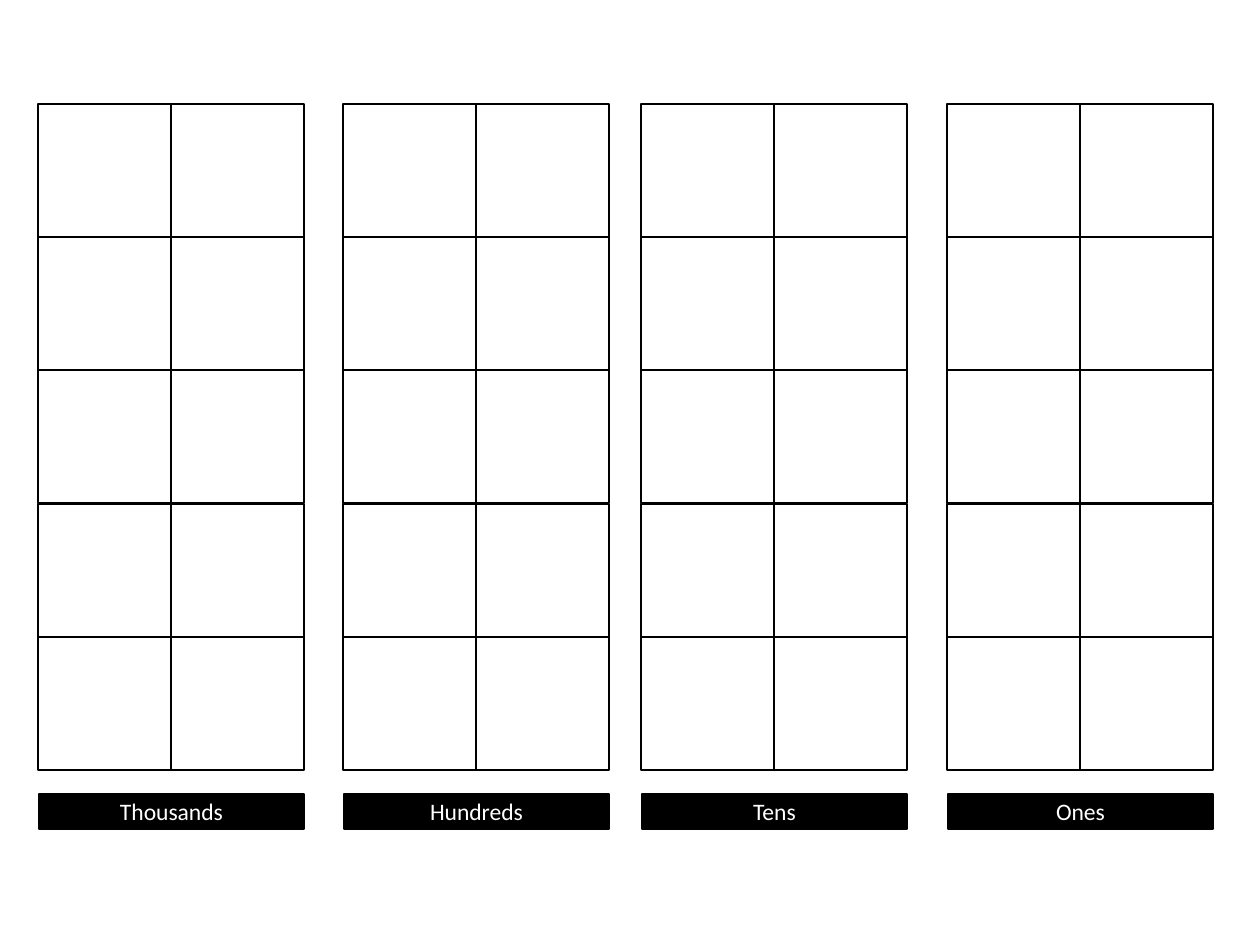
from pptx import Presentation, util as u
from pptx.dml.color import RGBColor
from pptx.enum import shapes, text

EMU_PER_PX = 914400 / 126
COLORS = {"ink": "000000", "paper": "FFFFFF"}
COLUMNS = {"Thousands": 38, "Hundreds": 343, "Tens": 641, "Ones": 947}
ROWS, CELLS_ACROSS = 5, 2
FRAME_TOP, FRAME_HEIGHT = 104, 667
CELL = 133


def px(length):
    """Turn pixels into EMU."""
    return u.Emu(round(length * EMU_PER_PX))


class PlaceValueMat:
    """Style and drawing methods for a place value mat of ten frames."""

    font = "Calibri"
    label_size = u.Pt(13.5)

    def __init__(self, slide):
        self.slide = slide

    def rectangle(self, group, left, top, width, height, fill, line_width):
        shape = group.shapes.add_shape(
            shapes.MSO_SHAPE.RECTANGLE, px(left), px(top), px(width), px(height))
        shape.shadow.inherit = False
        shape.fill.solid()
        shape.fill.fore_color.rgb = RGBColor.from_string(COLORS[fill])
        shape.line.color.rgb = RGBColor.from_string(COLORS["ink"])
        shape.line.width = u.Pt(line_width)
        return shape

    def ten_frame(self, group, left):
        for across in range(CELLS_ACROSS):
            for row in range(ROWS):
                top = FRAME_TOP + row * FRAME_HEIGHT // ROWS
                self.rectangle(group, left + across * CELL, top, CELL, CELL, "paper", 1.5)

    def label(self, group, left, caption):
        shape = self.rectangle(group, left + 1, 794, 265, 35, "ink", 1)
        frame = shape.text_frame
        frame.margin_top = frame.margin_bottom = 0
        frame.vertical_anchor = text.MSO_ANCHOR.MIDDLE
        frame.text = caption
        paragraph = frame.paragraphs[0]
        paragraph.alignment = text.PP_ALIGN.CENTER
        paragraph.font.name = self.font
        paragraph.font.size = self.label_size
        paragraph.font.color.rgb = RGBColor.from_string(COLORS["paper"])

    def column(self, left, caption):
        group = self.slide.shapes.add_group_shape()
        self.ten_frame(group, left)
        self.label(group, left, caption)


def main():
    presentation = Presentation()
    presentation.slide_width = px(1260)
    presentation.slide_height = px(945)
    slide = presentation.slides.add_slide(presentation.slide_layouts[6])
    mat = PlaceValueMat(slide)
    for caption, left in COLUMNS.items():
        mat.column(left, caption)
    presentation.save("out.pptx")


if __name__ == "__main__":
    main()
